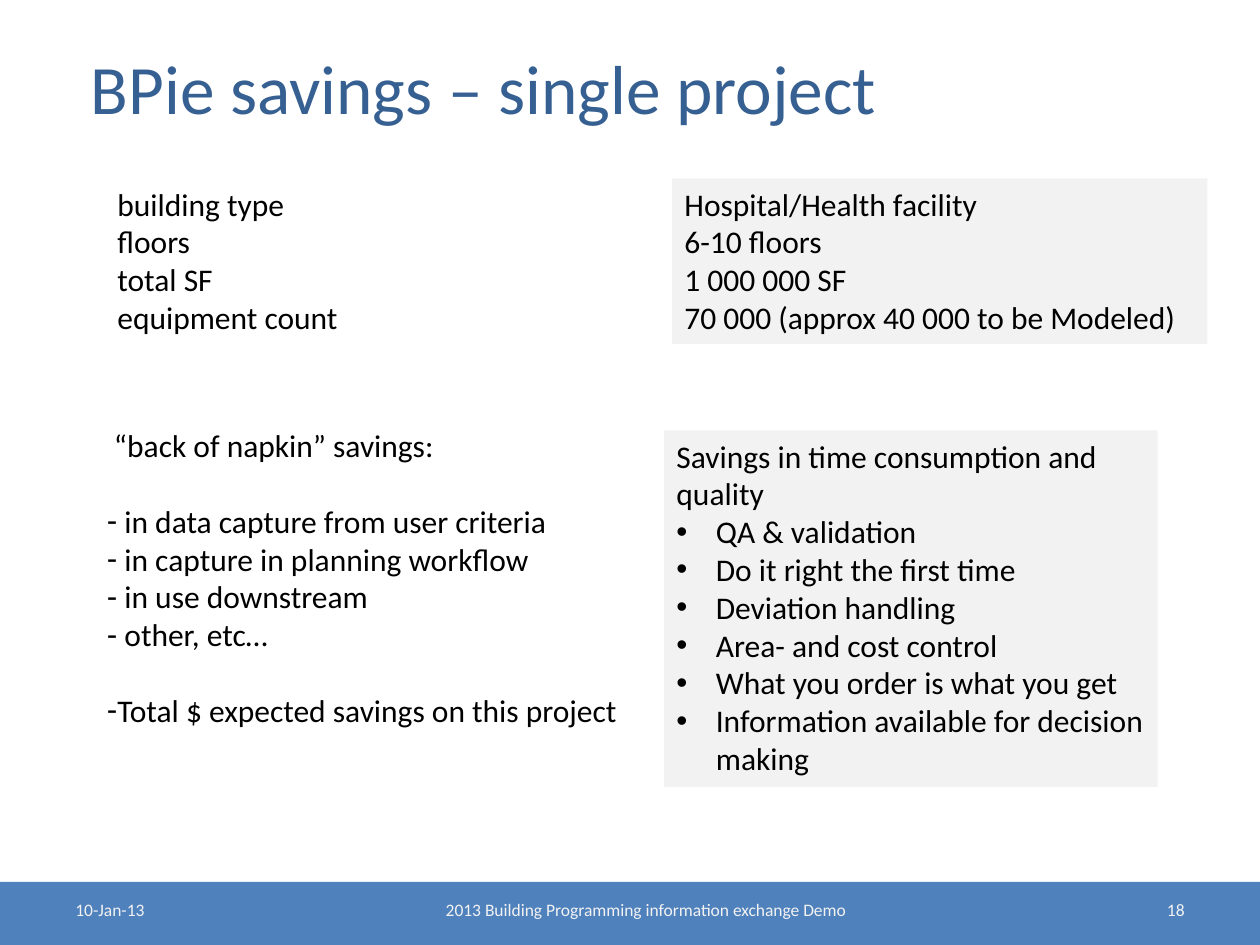
from lxml.etree import SubElement
from pptx import Presentation
from pptx.dml.color import RGBColor
from pptx.enum.shapes import MSO_SHAPE as Shape
from pptx.enum.text import MSO_ANCHOR as Anchor, PP_ALIGN as Align
from pptx.oxml.ns import qn
from pptx.util import Pt

BLACK = RGBColor(0x00, 0x00, 0x00)
NAVY = RGBColor(0x37, 0x60, 0x92)
BLUE = RGBColor(0x4F, 0x81, 0xBD)
PALE = RGBColor(0xF2, 0xF2, 0xF2)

TITLE = {"name": "Calibri", "size": Pt(39.6), "color": NAVY}
BODY = {"name": "Calibri", "size": Pt(18), "color": BLACK}
FOOTER = {"name": "Calibri", "size": Pt(10), "color": PALE}
LINE_GAP = 21.6

DASH = {"bullet": "-"}
DOT = {"bullet": "•", "indent": 22.5}
GAP = {"before": LINE_GAP}

FACTS = ["building type", "floors", "total SF", "equipment count"]
PROJECT = [
    "Hospital/Health facility",
    "6-10 floors",
    "1 000 000 SF",
    "70 000 (approx 40 000 to be Modeled)",
]
NAPKIN = [
    " “back of napkin” savings:",
    (" in data capture from user criteria", DASH | GAP),
    (" in capture in planning workflow", DASH),
    (" in use downstream", DASH),
    (" other, etc…", DASH),
    ("Total $ expected savings on this project", DASH | GAP),
]
SAVINGS = ["Savings in time consumption and quality"] + [
    (text, DOT)
    for text in (
        "QA & validation",
        "Do it right the first time",
        "Deviation handling",
        "Area- and cost control",
        "What you order is what you get",
        "Information available for decision making",
    )
]

BLOCKS = [
    ((36, 21.6, 648, 56.2), [" BPie savings – single project"], TITLE, {"anchor": Anchor.MIDDLE}),
    ((60, 102, 312, 94.5), FACTS, BODY, {}),
    ((384, 102, 306, 94.5), PROJECT, BODY, {"fill": PALE}),
    ((54, 240, 306, 181.4), NAPKIN, BODY, {}),
    ((379.5, 246, 282, 203.6), SAVINGS, BODY, {"fill": PALE}),
    ((0, 504, 720, 36), [], FOOTER, {"fill": BLUE}),
    ((210, 510, 318, 19.4), ["2013 Building Programming information exchange Demo"], FOOTER, {"align": Align.CENTER}),
    ((516, 510, 168, 19.4), ["18"], FOOTER, {"align": Align.RIGHT}),
    ((36, 510, 168, 19.4), ["10-Jan-13"], FOOTER, {}),
]


def set_bullet(p, bullet, indent=0):
    ppr = p._p.get_or_add_pPr()
    ppr.set("marL", str(Pt(indent)))
    ppr.set("indent", str(-Pt(indent)))
    SubElement(ppr, qn("a:buFont"), typeface="Arial")
    SubElement(ppr, qn("a:buChar"), char=bullet)


def add_block(s, box, lines, font, fill=None, align=Align.LEFT, anchor=Anchor.TOP):
    box = [Pt(v) for v in box]
    if fill is None:
        sp = s.shapes.add_textbox(*box)
    else:
        sp = s.shapes.add_shape(Shape.RECTANGLE, *box)
        sp.shadow.inherit = False
        sp.fill.solid()
        sp.fill.fore_color.rgb = fill
        sp.line.fill.background()
    tf = sp.text_frame
    tf.word_wrap = True
    tf.vertical_anchor = anchor
    for i, line in enumerate(lines):
        text, style = (line, {}) if isinstance(line, str) else line
        p = tf.add_paragraph() if i else tf.paragraphs[0]
        p.alignment = align
        p.space_before = Pt(style.get("before", 0))
        if "bullet" in style:
            set_bullet(p, style["bullet"], style.get("indent", 0))
        r = p.add_run()
        r.text = text
        for key, value in font.items():
            if key == "color":
                r.font.color.rgb = value
            else:
                setattr(r.font, key, value)


def main():
    prs = Presentation()
    prs.slide_width, prs.slide_height = Pt(720), Pt(540)
    s = prs.slides.add_slide(prs.slide_layouts[6])
    for box, lines, font, options in BLOCKS:
        add_block(s, box, lines, font, **options)
    prs.save("out.pptx")


if __name__ == "__main__":
    main()
